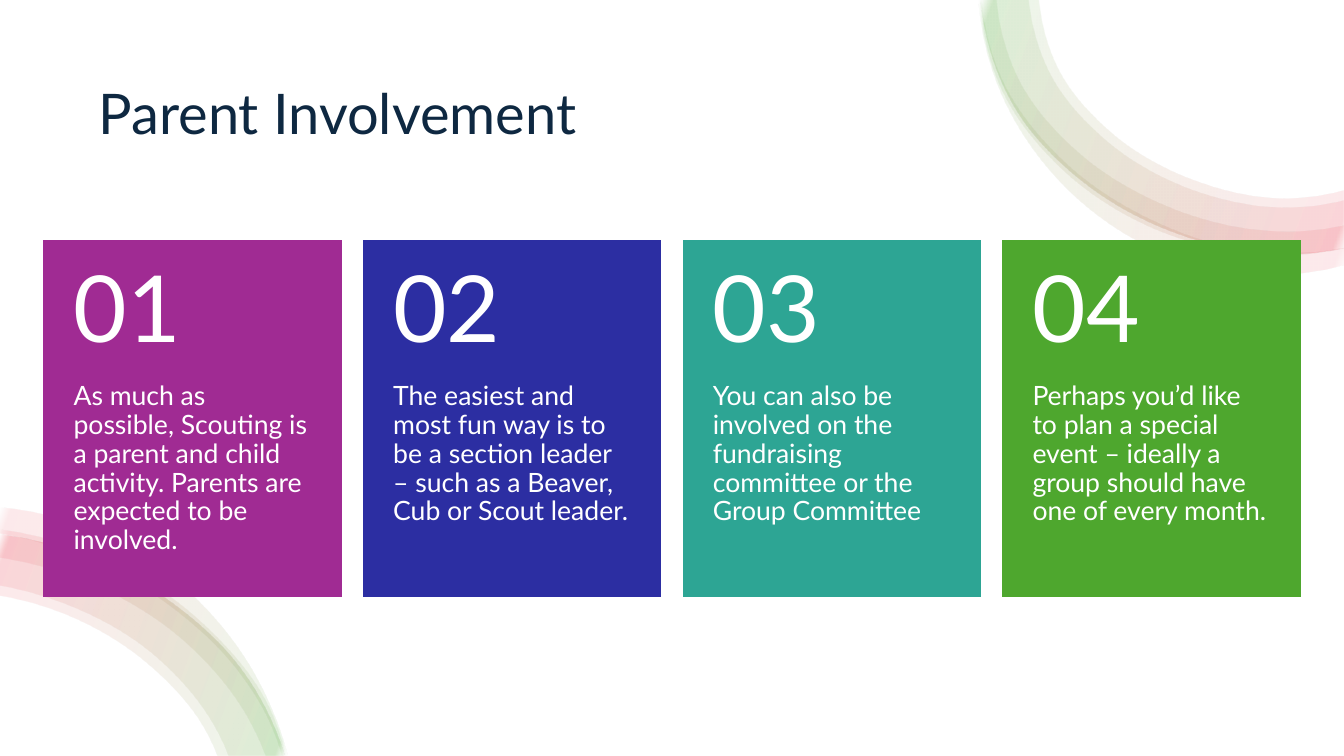
from dataclasses import dataclass

from pptx import Presentation
from pptx.dml.color import RGBColor as Color
from pptx.enum.shapes import MSO_SHAPE as Preset
from pptx.enum.text import MSO_ANCHOR as Anchor, MSO_AUTO_SIZE as AutoSize, PP_ALIGN as Align
from pptx.oxml import parse_xml
from pptx.oxml.ns import nsdecls
from pptx.util import Inches, Pt


@dataclass(frozen=True)
class Theme:
    font: str = "Lato"
    paper: str = "FFFFFF"
    heading: str = "0E2841"
    card_text: str = "FFFFFF"
    cards: tuple = ("A02B93", "2C2EA2", "2DA594", "4EA72E")
    ribbon: tuple = ((0, "FFFFFF"), (3, "4EA72E"), (97, "ED2939"), (100, "FFFFFF"))
    ribbon_opacity: int = 10
    title_size: int = 40
    number_size: int = 66
    body_size: int = 19
    border: float = 1.5


@dataclass(frozen=True)
class Box:
    left: float
    top: float
    width: float
    height: float

    def share(self, left, top, width, height):
        return Box(self.left + left * self.width, self.top + top * self.height,
                   width * self.width, height * self.height)

    def columns(self, count, gap):
        width = (1 - gap * (count - 1)) / count
        return [self.share(index * (width + gap), 0, width, 1) for index in range(count)]

    def lengths(self):
        return [Inches(value) for value in (self.left, self.top, self.width, self.height)]


THEME = Theme()
PAGE = Box(0, 0, 13.33, 7.5)
CARD_TEXTS = (
    "As much as possible, Scouting is a parent and child activity. Parents are expected to be involved.",
    "The easiest and most fun way is to be a section leader – such as a Beaver, Cub or Scout leader.",
    "You can also be involved on the fundraising committee or the Group Committee",
    "Perhaps you’d like to plan a special event – ideally a group should have one of every month.",
)

TOP_OUTER = ((0.02, 0), (0.38, 1.1), (1.09, 1.84), (2.03, 2.33), (3.08, 2.51), (3.62, 2.45))
TOP_BANDS = (
    (TOP_OUTER, ((0.6, 0), (0.79, 0.68), (1.35, 1.34), (2.16, 1.79), (3.08, 1.96), (3.62, 1.88))),
    (TOP_OUTER, ((0.5, 0), (0.71, 0.73), (1.29, 1.41), (2.13, 1.88), (3.08, 2.05), (3.62, 1.98))),
    (((0.02, 0), (0.23, 0.89), (0.83, 1.68), (1.68, 2.24), (2.68, 2.51), (3.2, 2.52), (3.62, 2.46)),
     ((0.18, 0), (0.41, 0.81), (1, 1.52), (1.79, 2.01), (2.71, 2.27), (3.18, 2.29), (3.62, 2.23))),
    (((0, 0), (0.2, 0.87), (0.75, 1.74), (1.6, 2.4), (2.65, 2.71), (3.21, 2.7), (3.62, 2.62)),
     ((0.03, 0), (0.23, 0.78), (0.88, 1.63), (1.72, 2.18), (2.68, 2.48), (3.19, 2.5), (3.62, 2.45))),
)
BOTTOM_OUTER = ((0, 0.26), (0.96, 0.52), (1.73, 0.96), (2.35, 1.55), (2.82, 2.46))
BOTTOM_BANDS = (
    (((0, 0), (0.29, 0.04), (1.15, 0.34), (1.84, 0.81), (2.45, 1.53), (2.71, 2.04), (2.85, 2.46)),
     ((0, 0.26), (0.5, 0.38), (1.02, 0.58), (1.74, 1.02), (2.34, 1.6), (2.67, 2.13), (2.79, 2.46))),
    (BOTTOM_OUTER, ((0, 0.87), (0.53, 1.01), (1.43, 1.52), (2.05, 2.24), (2.15, 2.46))),
    (((0, 0.22), (0.24, 0.26), (1.06, 0.52), (2, 1.14), (2.68, 2.01), (2.83, 2.46)),
     ((0, 0.5), (0.94, 0.77), (1.82, 1.32), (2.47, 2.11), (2.63, 2.46))),
    (BOTTOM_OUTER, ((0, 0.77), (0.56, 0.92), (1.5, 1.44), (2.14, 2.2), (2.26, 2.46))),
)


def write_text(shape, text, *, size, color, anchor=Anchor.TOP, insets=(0.1, 0.05, 0.1, 0.05)):
    frame = shape.text_frame
    frame.word_wrap = True
    frame.auto_size = AutoSize.NONE
    frame.vertical_anchor = anchor
    frame.margin_left, frame.margin_top, frame.margin_right, frame.margin_bottom = map(Inches, insets)
    paragraph = frame.paragraphs[0]
    paragraph.alignment = Align.LEFT
    paragraph.line_spacing = 0.9
    run = paragraph.add_run()
    run.text = text
    run.font.name = THEME.font
    run.font.size = Pt(size)
    run.font.color.rgb = Color.from_string(color)


def add_rectangle(shapes, box, color):
    shape = shapes.add_shape(Preset.RECTANGLE, *box.lengths())
    shape.shadow.inherit = False
    shape.fill.solid()
    shape.fill.fore_color.rgb = Color.from_string(color)
    shape.line.fill.background()
    return shape


def path_command(name, *points):
    places = "".join(f'<a:pt x="{round(point.real)}" y="{round(point.imag)}"/>' for point in points)
    return parse_xml(f'<a:{name} {nsdecls("a")}>{places}</a:{name}>')


def curve_commands(points):
    chords = [end - start for start, end in zip(points, points[1:])]
    units = [chord / abs(chord) for chord in chords]
    inner = [(units[i] * abs(chords[i + 1]) + units[i + 1] * abs(chords[i]))
             / (abs(chords[i]) + abs(chords[i + 1])) for i in range(len(chords) - 1)]
    tangents = [2 * units[0] - inner[0], *inner, 2 * units[-1] - inner[-1]]
    return [path_command("cubicBezTo", start + leave * abs(chord) / 3, end - arrive * abs(chord) / 3, end)
            for start, end, chord, leave, arrive
            in zip(points, points[1:], chords, tangents, tangents[1:])]


def fill_gradient(shape, angle):
    stops = "".join(
        f'<a:gs pos="{position * 1000}"><a:srgbClr val="{color}">'
        f'<a:alpha val="{THEME.ribbon_opacity * 1000}"/></a:srgbClr></a:gs>'
        for position, color in THEME.ribbon)
    gradient = parse_xml(f'<a:gradFill {nsdecls("a")} rotWithShape="1"><a:gsLst>{stops}</a:gsLst>'
                         f'<a:lin ang="{angle * 60000}" scaled="0"/></a:gradFill>')
    shape.fill.background()
    properties = shape.element.spPr
    properties.replace(properties.find("{*}noFill"), gradient)


def draw_band(shapes, box, outer, inner, angle):
    corners = [(Inches(box.left + x), Inches(box.top + y)) for x, y in outer + inner[::-1]]
    builder = shapes.build_freeform(*corners[0])
    builder.add_line_segments(corners[1:], close=True)
    shape = builder.convert_to_shape()
    points = [complex(x - shape.left, y - shape.top) for x, y in corners]
    there, back = points[:len(outer)], points[len(outer):]
    outline = shape.element.spPr.find(".//{*}path")
    for command in list(outline):
        outline.remove(command)
    outline.extend([path_command("moveTo", there[0]), *curve_commands(there),
                    path_command("lnTo", back[0]), *curve_commands(back), path_command("close")])
    shape.shadow.inherit = False
    shape.line.fill.background()
    fill_gradient(shape, angle)


def draw_ribbon(slide, box, bands, angle):
    group = slide.shapes.add_group_shape()
    for outer, inner in bands:
        draw_band(group.shapes, box, outer, inner, angle)


def draw_title(slide, box, text):
    title = slide.shapes.title
    title.left, title.top, title.width, title.height = box.lengths()
    write_text(title, text, size=THEME.title_size, color=THEME.heading, anchor=Anchor.MIDDLE)


def draw_card(shapes, box, number, text, color):
    card = add_rectangle(shapes, box, color)
    card.line.color.rgb = Color.from_string(color)
    card.line.width = Pt(THEME.border)
    card.element.spPr.find("{*}ln").append(parse_xml(f'<a:miter {nsdecls("a")} lim="800000"/>'))
    body = shapes.add_textbox(*box.share(0, 0.4, 1, 0.6).lengths())
    write_text(body, text, size=THEME.body_size, color=THEME.card_text, insets=(0.29, 0, 0.29, 0.36))
    heading = shapes.add_textbox(*box.share(0, 0, 1, 0.4).lengths())
    write_text(heading, f"{number:02}", size=THEME.number_size, color=THEME.card_text,
               anchor=Anchor.MIDDLE, insets=(0.29, 0.18, 0.29, 0.18))


def draw_cards(slide, box):
    group = slide.shapes.add_group_shape()
    columns = box.columns(len(CARD_TEXTS), gap=0.0185)
    for number, (column, text, color) in enumerate(zip(columns, CARD_TEXTS, THEME.cards), 1):
        draw_card(group.shapes, column, number, text, color)


def main():
    presentation = Presentation()
    presentation.slide_width = Inches(PAGE.width)
    presentation.slide_height = Inches(PAGE.height)
    slide = presentation.slides.add_slide(presentation.slide_layouts.get_by_name("Title Only"))
    paper = add_rectangle(slide.shapes, PAGE, THEME.paper)
    slide.shapes.title.element.addprevious(paper.element)
    draw_title(slide, PAGE.share(0.066, 0.067, 0.868, 0.173), "Parent Involvement")
    draw_ribbon(slide, PAGE.share(0.7284, 0, 0.2716, 0.363), TOP_BANDS, angle=20)
    draw_ribbon(slide, PAGE.share(0, 0.672, 0.214, 0.328), BOTTOM_BANDS, angle=200)
    draw_cards(slide, PAGE.share(0.033, 0.319, 0.934, 0.469))
    presentation.save("out.pptx")


if __name__ == "__main__":
    main()
